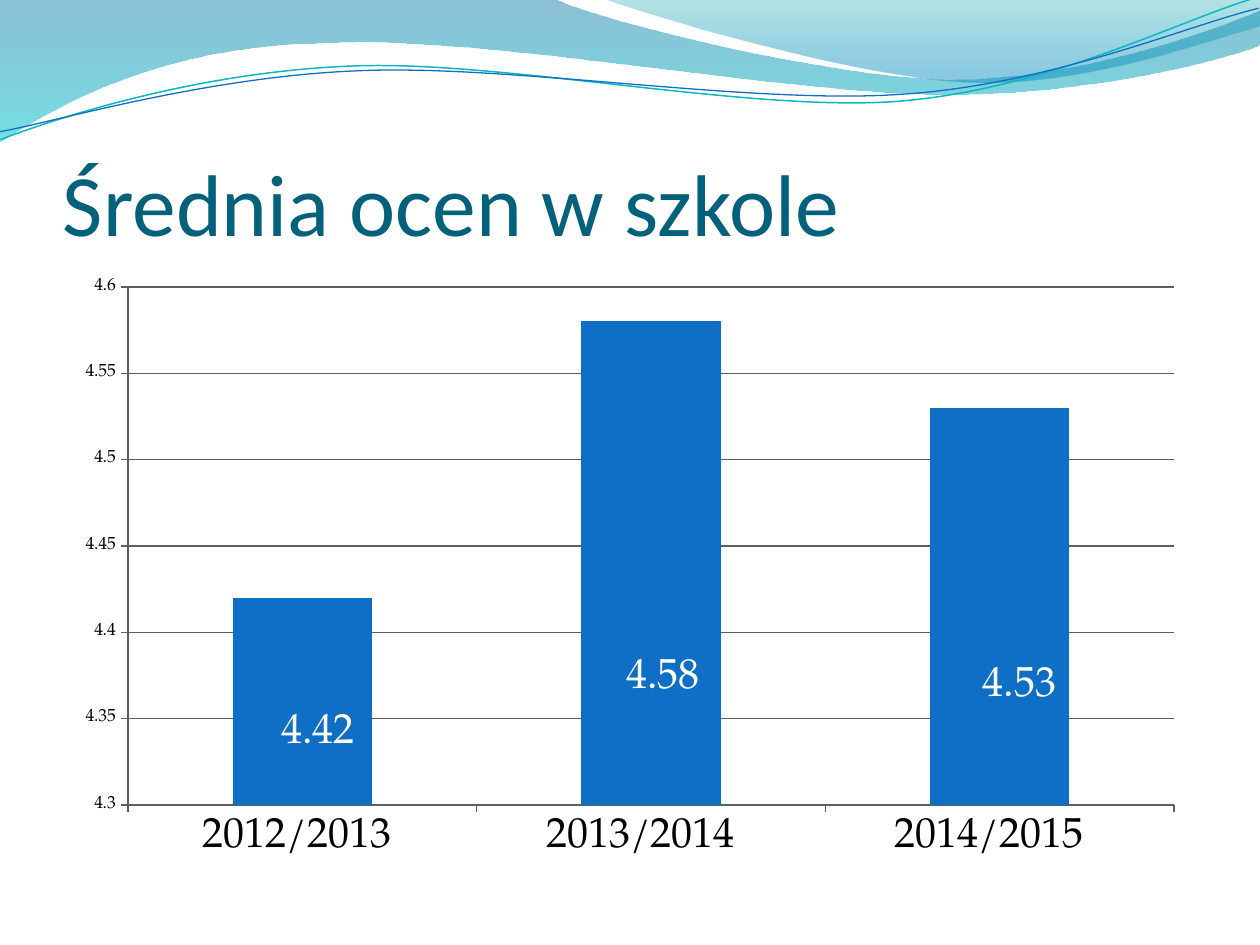
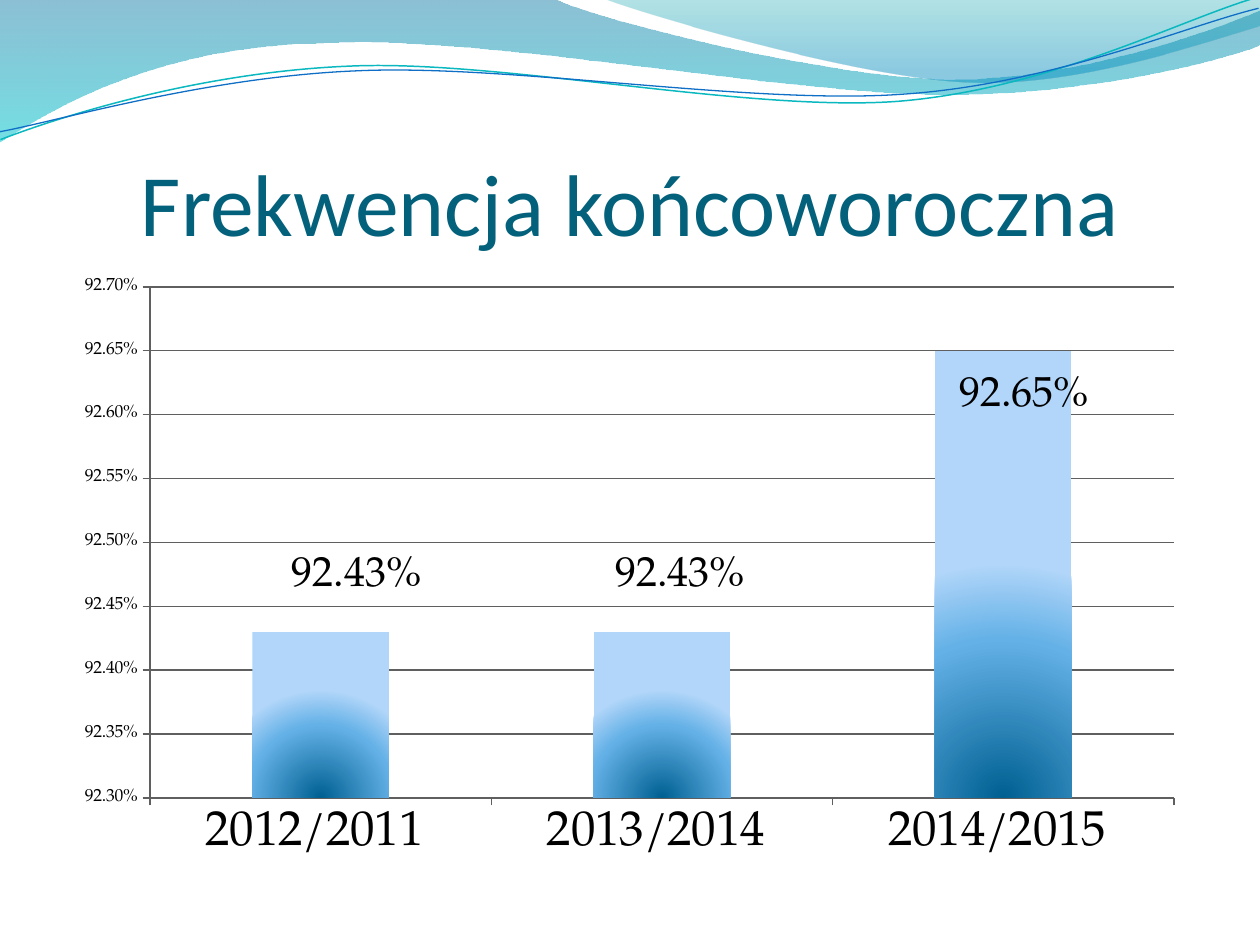
from collections import namedtuple

from pptx import Presentation
from pptx import util as u
from pptx.chart import data as chart_data
from pptx.dml.color import RGBColor
from pptx.enum import chart as charts, text
from pptx.oxml import parse_xml
from pptx.oxml.ns import nsdecls

PX = 914400 / 126  # EMU in one px
Box = namedtuple("Box", "left top width height")

SLIDE = Box(0, 0, 1260, 945)
TITLE = Box(63, 97, 1134, 157)
CHART = Box(63, 267, 1134, 605)

COLORS = {
    "title": "04617B", "blue": "0F6FC6", "teal": "0AB8BF",
    "axis": "5F5F5F", "black": "000000", "white": "FFFFFF",
    "wave_top": "0074A1", "wave_bottom": "00C6CF",
    "crest_top": "00A1A9", "crest_bottom": "008BBF",
    "bar_core": "006091", "bar_middle": "64B1E7", "bar_edge": "B1D6F9",
}
TITLE_FONT = "Calibri"
CHART_FONT = "TeX Gyre Pagella"

# Outlines: a start point, then lines (x, y) or Bezier curves (three points)
WAVE = [(0, 0), (554, -1), (600, 21, 837, 79, 955, 79),
        (1075, 79, 1207, 33, 1260, 11), (1261, 45),
        (1239, 55, 1096, 96, 940, 94), (784, 94, 481, 35, 324, 43),
        (163, 45, 58, 105, -1, 142), (0, 0)]
CREST = [(604, -1), (641, 14, 859, 78, 969, 82),
         (1079, 87, 1211, 40, 1260, 26), (1260, 0), (604, -1)]

# The thin lines are drawn level, then turned
LINE_ROTATION = 357.3
TEAL_LINE = [(-2, 110), (58, 90, 199, 52, 350, 53),
             (499, 53, 745, 118, 896, 114), (1049, 109, 1184, 45, 1260, 27)]
BLUE_LINE = [(-2, 102), (57, 94, 207, 57, 357, 58),
             (509, 58, 750, 111, 902, 107), (1052, 104, 1188, 52, 1261, 38)]

DOWNWARD = '<a:lin ang="5400000" scaled="0"/>'
RADIAL = ('<a:path path="circle"><a:fillToRect l="50000" t="130000" '
          'r="50000" b="-30000"/></a:path>')


def px(length):
    return u.Emu(round(length * PX))


def place(box):
    return [px(length) for length in box]


def rgb(name):
    return RGBColor.from_string(COLORS[name])


def set_gradient(element, stops, direction):
    """Put a gradient of (position, colour, opacity) in place of the empty fill."""
    stops_xml = "".join(
        f'<a:gs pos="{position * 1000}"><a:srgbClr val="{COLORS[color]}">'
        f'<a:alpha val="{opacity * 1000}"/></a:srgbClr></a:gs>'
        for position, color, opacity in stops)
    gradient = parse_xml(f'<a:gradFill {nsdecls("a")} rotWithShape="1">'
                         f'<a:gsLst>{stops_xml}</a:gsLst>{direction}</a:gradFill>')
    empty_fill = element.xpath(".//a:noFill")[0]
    empty_fill.getparent().replace(empty_fill, gradient)


def add_outline(shapes, box, outline, close):
    """Build a freeform through all points, then join point triples into curves."""
    points = [(px(box.left + x), px(box.top + y))
              for segment in outline for x, y in zip(segment[::2], segment[1::2])]
    builder = shapes.build_freeform(*points[0], scale=1.0)
    builder.add_line_segments(points[1:], close=close)
    shape = builder.convert_to_shape()
    lines = iter(shape.element.xpath(".//a:lnTo"))
    for segment in outline[1:]:
        first = next(lines)
        if len(segment) == 6:
            curve = parse_xml(f'<a:cubicBezTo {nsdecls("a")}/>')
            first.addprevious(curve)
            for line in (first, next(lines), next(lines)):
                curve.append(line[0])
                line.getparent().remove(line)
    shape.shadow.inherit = False
    shape.fill.background()
    return shape


def add_waves(slide, box):
    # Filled bands
    bands = [(WAVE, [(0, "wave_top", 45), (100, "wave_bottom", 55)]),
             (CREST, [(0, "crest_top", 30), (80, "crest_bottom", 45)])]
    for outline, stops in bands:
        shape = add_outline(slide.shapes, box, outline, True)
        set_gradient(shape.element, stops, DOWNWARD)
        shape.line.fill.background()

    # Thin lines
    group = slide.shapes.add_group_shape()
    for outline, color, width in [(TEAL_LINE, "teal", 0.85), (BLUE_LINE, "blue", 0.75)]:
        shape = add_outline(group.shapes, box, outline, False)
        shape.rotation = LINE_ROTATION
        shape.line.color.rgb = rgb(color)
        shape.line.width = u.Pt(width)


def add_title(slide, box, title, alignment):
    frame = slide.shapes.add_textbox(*place(box)).text_frame
    frame.word_wrap = True
    frame.vertical_anchor = text.MSO_ANCHOR.BOTTOM
    frame.margin_left = frame.margin_right = frame.margin_bottom = 0
    frame.margin_top = u.Inches(0.05)
    paragraph = frame.paragraphs[0]
    paragraph.alignment = alignment
    run = paragraph.add_run()
    run.text = title
    run.font.name = TITLE_FONT
    run.font.size = u.Pt(50)
    run.font.color.rgb = rgb("title")


def layout_xml(settings):
    items = "".join(f'<c:{name} val="{value}"/>' for name, value in settings.items())
    return parse_xml(f'<c:layout {nsdecls("c")}><c:manualLayout>{items}'
                     '</c:manualLayout></c:layout>')


def style_font(font, size, color):
    font.name = CHART_FONT
    font.size = u.Pt(size)
    font.color.rgb = rgb(color)


def style_axes(chart, limits, number_format, category_size):
    value_axis, category_axis = chart.value_axis, chart.category_axis
    value_axis.minimum_scale, value_axis.maximum_scale, value_axis.major_unit = limits
    value_axis.has_major_gridlines = True
    for axis, size in [(value_axis, 10), (category_axis, category_size)]:
        axis.major_tick_mark = charts.XL_TICK_MARK.OUTSIDE
        axis.minor_tick_mark = charts.XL_TICK_MARK.NONE
        style_font(axis.tick_labels.font, size, "black")
    value_axis.tick_labels.number_format = number_format
    value_axis.tick_labels.number_format_is_linked = False
    for line in (value_axis.format.line, category_axis.format.line,
                 value_axis.major_gridlines.format.line):
        line.color.rgb = rgb("axis")
        line.width = u.Pt(0.75)


def add_labels(chart, box, color, number_format, shifts):
    """Label each bar, moved by its (right, down) shift from the bar's top."""
    series = chart.plots[0].series[0]
    labels = series.data_labels
    labels.show_value = True
    labels.number_format = number_format
    labels.number_format_is_linked = False
    labels.position = charts.XL_LABEL_POSITION.OUTSIDE_END
    style_font(labels.font, 24, color)
    for index in range(len(shifts)):
        label = series.points[index].data_label
        label.position = charts.XL_LABEL_POSITION.OUTSIDE_END
        style_font(label.font, 24, color)
    for element, (right, down) in zip(chart.element.xpath(".//c:dLbl"), shifts):
        element.xpath("c:idx")[0].addnext(layout_xml(
            {"x": round(right / box.width, 4), "y": round(down / box.height, 4)}))
    for leader_lines in chart.element.xpath(".//c:showLeaderLines"):
        leader_lines.set("val", "0")


def add_bar_chart(slide, box, plot_box, categories, values, limits, number_format,
                  category_size, label_color, label_shifts, bar_stops=None):
    data = chart_data.CategoryChartData(number_format=number_format)
    data.categories = categories
    data.add_series("Series 1", values)
    chart = slide.shapes.add_chart(
        charts.XL_CHART_TYPE.COLUMN_CLUSTERED, *place(box), data).chart
    chart.has_legend = False
    chart.has_title = False
    style_font(chart.font, 10, "black")
    style_axes(chart, limits, number_format, category_size)

    # Bars
    plot = chart.plots[0]
    plot.gap_width = 150
    plot.vary_by_categories = False
    fill = plot.series[0].format.fill
    if bar_stops:
        fill.background()
        set_gradient(chart.element.xpath(".//c:ser/c:spPr")[0], bar_stops, RADIAL)
    else:
        fill.solid()
        fill.fore_color.rgb = rgb("blue")
    add_labels(chart, box, label_color, number_format, label_shifts)

    # Plot area
    plot_area = chart.element.xpath(".//c:plotArea")[0]
    for layout in plot_area.xpath("c:layout"):
        plot_area.remove(layout)
    plot_area.insert(0, layout_xml({
        "layoutTarget": "inner", "xMode": "edge", "yMode": "edge",
        "x": round(plot_box.left / box.width, 4), "y": round(plot_box.top / box.height, 4),
        "w": round(plot_box.width / box.width, 4),
        "h": round(plot_box.height / box.height, 4)}))


def add_chart_slide(presentation, title, alignment, **chart_options):
    slide = presentation.slides.add_slide(presentation.slide_layouts[6])
    slide.background.fill.solid()
    slide.background.fill.fore_color.rgb = rgb("white")
    add_waves(slide, SLIDE)
    add_title(slide, TITLE, title, alignment)
    add_bar_chart(slide, CHART, **chart_options)


def main():
    presentation = Presentation()
    presentation.slide_width = px(SLIDE.width)
    presentation.slide_height = px(SLIDE.height)

    # Average marks
    add_chart_slide(
        presentation, "Średnia ocen w szkole", text.PP_ALIGN.LEFT,
        plot_box=Box(65, 20, 1046, 518),
        categories=["2012/2013 ", "2013/2014  ", "2014/2015  "],
        values=[4.42, 4.58, 4.53], limits=(4.3, 4.6, 0.05),
        number_format="General", category_size=24, label_color="white",
        label_shifts=[(16, 163), (12, 384), (20, 305)])

    # Attendance
    add_chart_slide(
        presentation, "Frekwencja końcoworoczna", text.PP_ALIGN.CENTER,
        plot_box=Box(87, 20, 1024, 511),
        categories=["2012/2011 ", "2013/2014 ", "2014/2015 "],
        values=[0.9243, 0.9243, 0.9265], limits=(0.923, 0.927, 0.0005),
        number_format="0.00%", category_size=28, label_color="black",
        label_shifts=[(36, -29), (18, -29), (21, 72)],
        bar_stops=[(0, "bar_core", 100), (68, "bar_middle", 100), (100, "bar_edge", 100)])

    presentation.save("out.pptx")


if __name__ == "__main__":
    main()
